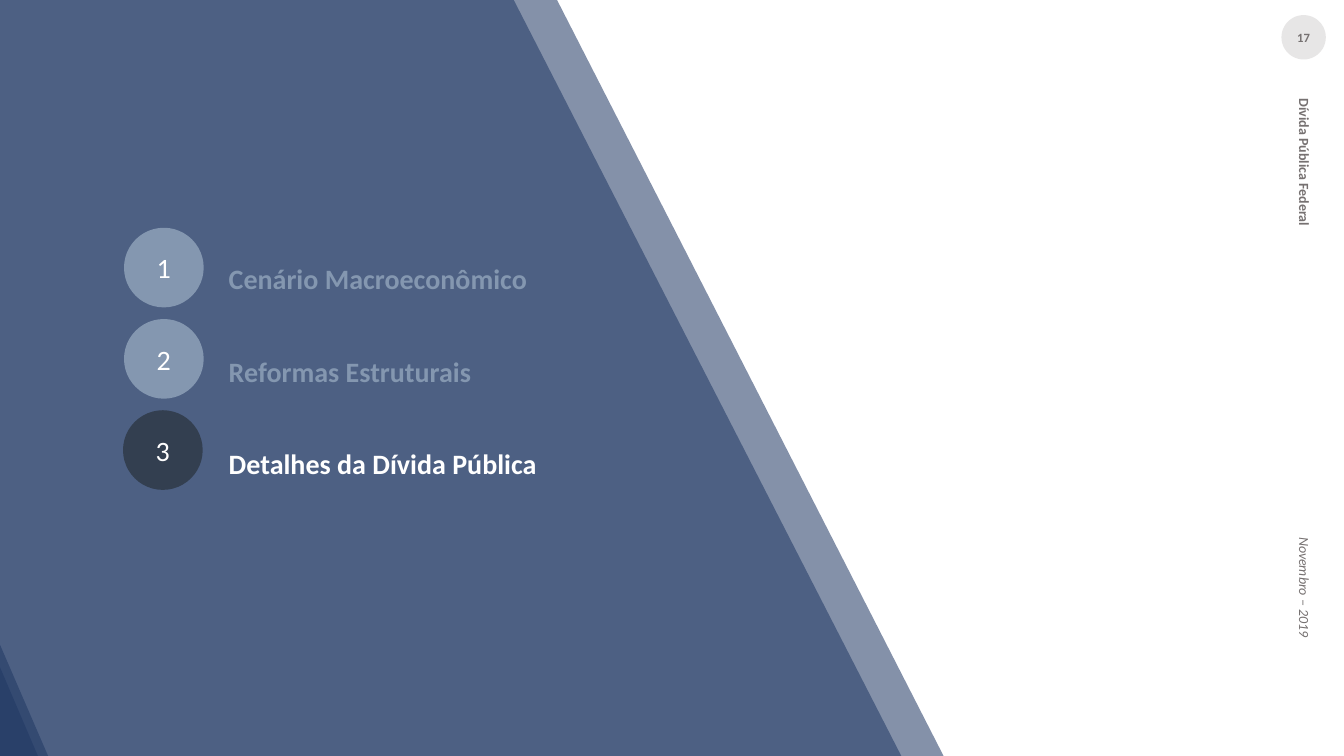
import pptx
import pptx.dml.color
import pptx.enum.shapes
import pptx.enum.text
import pptx.oxml
import pptx.oxml.ns
import pptx.util

Inches = pptx.util.Inches
Pt = pptx.util.Pt
ALIGN = pptx.enum.text.PP_ALIGN
MIDDLE = pptx.enum.text.MSO_ANCHOR.MIDDLE

NAVY, SLATE, DARK = "203864", "8497B0", "333F50"
WHITE, GREY, PALE = "FFFFFF", "767171", "E7E6E6"

deck = pptx.Presentation()
deck.slide_width, deck.slide_height = Inches(13.33), Inches(7.5)
page = deck.slides.add_slide(deck.slide_layouts[6])


def paint(target, color):
    """Give a fill or a font colour object a solid hex colour."""
    if hasattr(target, "solid"):
        target.solid()
        target = target.fore_color
    target.rgb = pptx.dml.color.RGBColor.from_string(color)


def write(para, text, size=20, color=WHITE, bold=False, italic=False):
    span = para.add_run()
    span.text = text
    span.font.name, span.font.size = "Calibri", Pt(size)
    span.font.bold, span.font.italic = bold, italic
    paint(span.font.color, color)


# Translucent panels, in hundredths of an inch: two corner wedges, two slanted bands
panels = [
    [(-3, 752), (-2, 635), (49, 753)],
    [(-2, 751), (-3, 655), (38, 751)],
    [(-4, -4), (551, -3), (940, 758), (-7, 756)],
    [(-6, -4), (508, -3), (898, 758), (-3, 759)],
]
for corners in panels:
    outline = page.shapes.build_freeform(*corners[0], scale=Inches(0.01))
    outline.add_line_segments(corners[1:], close=True)
    panel = outline.convert_to_shape()
    panel.shadow.inherit = False
    panel.line.fill.background()
    paint(panel.fill, NAVY)
    tint = panel.fill._xPr.find(".//" + pptx.oxml.ns.qn("a:srgbClr"))
    tint.append(pptx.oxml.parse_xml(
        f'<a:alpha {pptx.oxml.ns.nsdecls("a")} val="55000"/>'))

# Page number and agenda number circles
first_top, pitch = 2.26, 0.905
circles = [("17", 12.71, 0.15, 0.44, PALE, dict(size=9, color=GREY, bold=True))]
for row, (left, color) in enumerate([(1.23, SLATE), (1.23, SLATE), (1.22, DARK)]):
    circles.append((str(row + 1), left, first_top + row * pitch, 0.79, color, {}))
for label, left, top, size, color, style in circles:
    circle = page.shapes.add_shape(
        pptx.enum.shapes.MSO_SHAPE.OVAL,
        Inches(left), Inches(top), Inches(size), Inches(size))
    circle.shadow.inherit = False
    circle.line.fill.background()
    paint(circle.fill, color)
    frame = circle.text_frame
    frame.margin_left = frame.margin_right = 0
    frame.vertical_anchor = MIDDLE
    frame.paragraphs[0].alignment = ALIGN.CENTER
    write(frame.paragraphs[0], label, **style)

# Agenda topics, the current one in white
topics = [
    ("Cenário Macroeconômico", SLATE),
    ("Reformas Estruturais", SLATE),
    ("Detalhes da Dívida Pública", WHITE),
]
box = page.shapes.add_textbox(Inches(2.17), Inches(2.38), Inches(5.35), Inches(3.18))
frame = box.text_frame
frame.word_wrap = True
for row, (topic, color) in enumerate(topics):
    para = frame.add_paragraph() if row else frame.paragraphs[0]
    para.line_spacing, para.space_after = 1.5, Pt(30)
    write(para, topic, color=color, bold=True)

# Side caption, turned to read downwards: subject, then date at a tab stop
length, thickness, middle_x, middle_y = 6, 0.3, 12.94, 3.88
caption = page.shapes.add_textbox(
    Inches(middle_x - length / 2), Inches(middle_y - thickness / 2),
    Inches(length), Inches(thickness))
caption.rotation = 90
frame = caption.text_frame
frame.word_wrap = True
frame.vertical_anchor = MIDDLE
para = frame.paragraphs[0]
para._p.get_or_add_pPr().append(pptx.oxml.parse_xml(
    f'<a:tabLst {pptx.oxml.ns.nsdecls("a")}>'
    f'<a:tab pos="{Inches(4.35)}" algn="l"/></a:tabLst>'))
write(para, "Dívida Pública Federal", size=10, color=GREY, bold=True)
write(para, "\tNovembro – 2019", size=10, color=GREY, italic=True)

deck.save("out.pptx")
